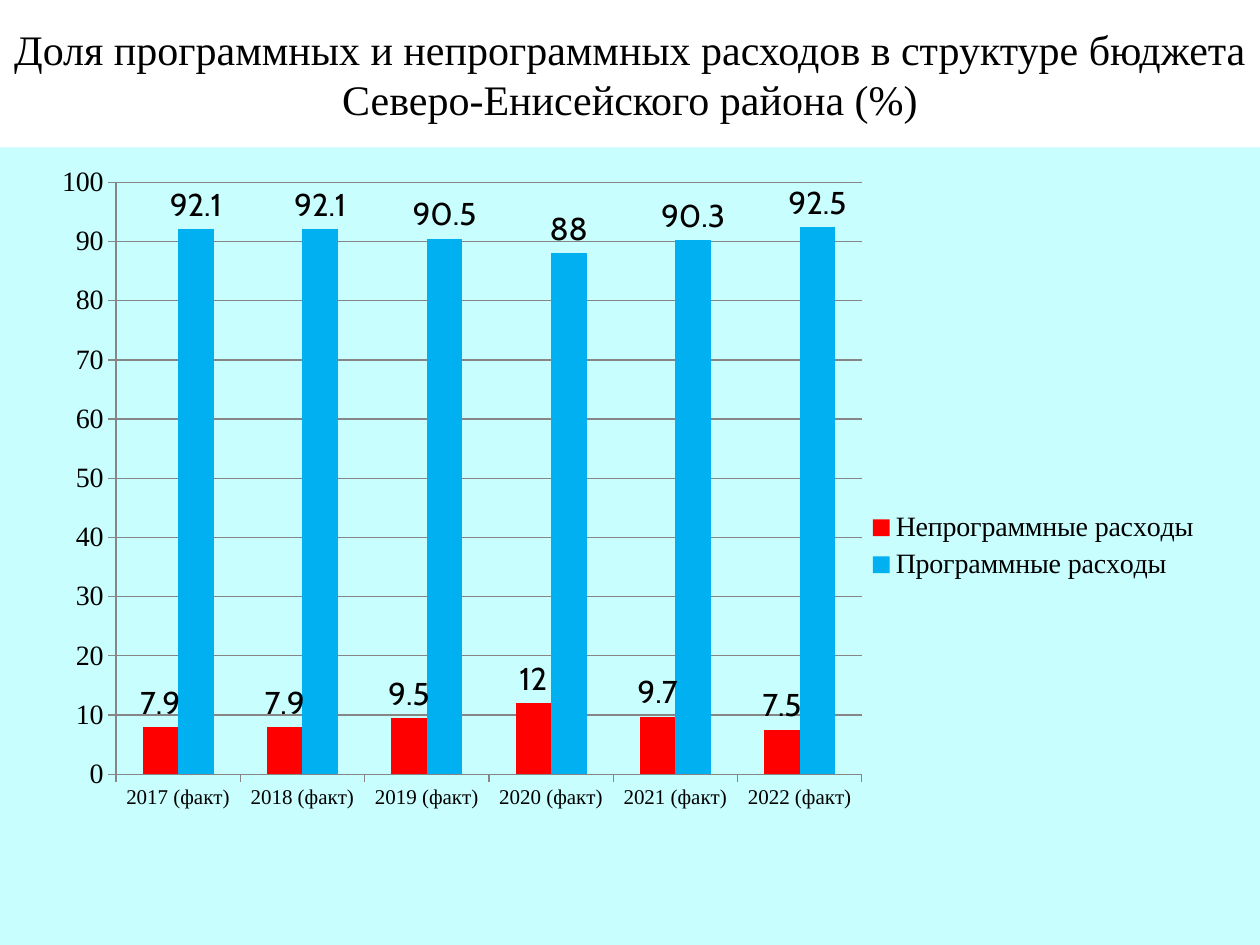
"""Build a slide comparing programme and non-programme budget shares by year."""
from lxml import etree
from pptx import Presentation
from pptx.chart.data import CategoryChartData
from pptx.dml.color import RGBColor
from pptx.enum.chart import XL_CHART_TYPE, XL_LABEL_POSITION, XL_LEGEND_POSITION, XL_TICK_MARK
from pptx.enum.shapes import MSO_SHAPE
from pptx.enum.text import MSO_ANCHOR, PP_ALIGN
from pptx.oxml.ns import qn
from pptx.util import Inches, Pt

CLUSTERED = XL_CHART_TYPE.COLUMN_CLUSTERED
OUTSIDE_END = XL_LABEL_POSITION.OUTSIDE_END
LEGEND_RIGHT = XL_LEGEND_POSITION.RIGHT
TICK_OUT = XL_TICK_MARK.OUTSIDE
RECTANGLE = MSO_SHAPE.RECTANGLE
MIDDLE = MSO_ANCHOR.MIDDLE
CENTER = PP_ALIGN.CENTER

BLACK = RGBColor(0x00, 0x00, 0x00)
WHITE = RGBColor(0xFF, 0xFF, 0xFF)
GRAY = RGBColor(0x86, 0x86, 0x86)
PALE_CYAN = RGBColor(0xC8, 0xFE, 0xFD)
RED = RGBColor(0xFF, 0x00, 0x00)
BLUE = RGBColor(0x00, 0xB0, 0xF0)

SERIF = "Times New Roman"
TITLE = "Доля программных и непрограммных расходов в структуре бюджета Северо-Енисейского района (%)"
YEARS = range(2017, 2023)
SERIES = [
    ("Непрограммные расходы", RED, (7.9, 7.9, 9.5, 12, 9.7, 7.5)),
    ("Программные расходы", BLUE, (92.1, 92.1, 90.5, 88, 90.3, 92.5)),
]
FONTS = {
    "title": {"name": SERIF, "size": Pt(24)},
    "chart": {"name": "Cabin", "size": Pt(18)},
    "category": {"name": SERIF, "size": Pt(12)},
    "value": {"name": SERIF, "size": Pt(16)},
    "legend": {"name": SERIF, "size": Pt(16)},
}
PLOT_LAYOUT = {"layoutTarget": "inner", "xMode": "edge", "yMode": "edge",
               "x": 0.092, "y": 0.044, "w": 0.592, "h": 0.742}
LEGEND_LAYOUT = {"xMode": "edge", "yMode": "edge", "x": 0.68, "y": 0.45, "w": 0.28, "h": 0.1}

SLIDE_WIDTH, SLIDE_HEIGHT, TITLE_HEIGHT = 10, 7.5, 1.17


def format_font(font, role):
    for attribute, value in FONTS[role].items():
        setattr(font, attribute, value)
    font.color.rgb = BLACK


def set_layout(parent, position, values):
    for previous in parent.findall(qn("c:layout")):
        parent.remove(previous)
    layout = etree.Element(qn("c:layout"))
    manual = etree.SubElement(layout, qn("c:manualLayout"))
    for name, value in values.items():
        etree.SubElement(manual, qn(f"c:{name}")).set("val", str(value))
    parent.insert(position, layout)


def add_budget_chart(slide):
    data = CategoryChartData()
    data.categories = [f"{year} (факт)" for year in YEARS]
    for name, _, values in SERIES:
        data.add_series(name, values)
    chart = slide.shapes.add_chart(
        CLUSTERED, 0, Inches(TITLE_HEIGHT), Inches(SLIDE_WIDTH),
        Inches(SLIDE_HEIGHT - TITLE_HEIGHT), data).chart
    format_font(chart.font, "chart")
    chart.has_title = False

    plot = chart.plots[0]
    plot.gap_width = 150
    plot.overlap = 0
    plot.vary_by_categories = False
    plot.has_data_labels = True
    plot.data_labels.show_value = True
    plot.data_labels.position = OUTSIDE_END
    format_font(plot.data_labels.font, "chart")
    for series, (_, color, _) in zip(plot.series, SERIES):
        series.format.fill.solid()
        series.format.fill.fore_color.rgb = color
        series.invert_if_negative = False

    for axis, role in ((chart.category_axis, "category"), (chart.value_axis, "value")):
        axis.major_tick_mark = TICK_OUT
        axis.format.line.color.rgb = GRAY
        format_font(axis.tick_labels.font, role)
    value_axis = chart.value_axis
    value_axis.minimum_scale, value_axis.maximum_scale, value_axis.major_unit = 0, 100, 10
    value_axis.has_major_gridlines = True
    value_axis.major_gridlines.format.line.color.rgb = GRAY

    chart.has_legend = True
    chart.legend.position = LEGEND_RIGHT
    chart.legend.include_in_layout = False
    format_font(chart.legend.font, "legend")
    set_layout(chart.element.find(".//" + qn("c:plotArea")), 0, PLOT_LAYOUT)
    set_layout(chart.element.find(".//" + qn("c:legend")), 1, LEGEND_LAYOUT)


def add_title(slide):
    shape = slide.shapes.add_shape(RECTANGLE, 0, 0, Inches(SLIDE_WIDTH), Inches(TITLE_HEIGHT))
    shape.shadow.inherit = False
    shape.fill.solid()
    shape.fill.fore_color.rgb = WHITE
    shape.line.fill.background()
    frame = shape.text_frame
    frame.word_wrap = True
    frame.vertical_anchor = MIDDLE
    frame.margin_left = frame.margin_right = Inches(0.05)
    paragraph = frame.paragraphs[0]
    paragraph.alignment = CENTER
    run = paragraph.add_run()
    run.text = TITLE
    format_font(run.font, "title")


def main():
    presentation = Presentation()
    presentation.slide_width = Inches(SLIDE_WIDTH)
    presentation.slide_height = Inches(SLIDE_HEIGHT)
    slide = presentation.slides.add_slide(presentation.slide_layouts[6])
    slide.background.fill.solid()
    slide.background.fill.fore_color.rgb = PALE_CYAN
    add_budget_chart(slide)
    add_title(slide)
    presentation.save("out.pptx")


if __name__ == "__main__":
    main()
